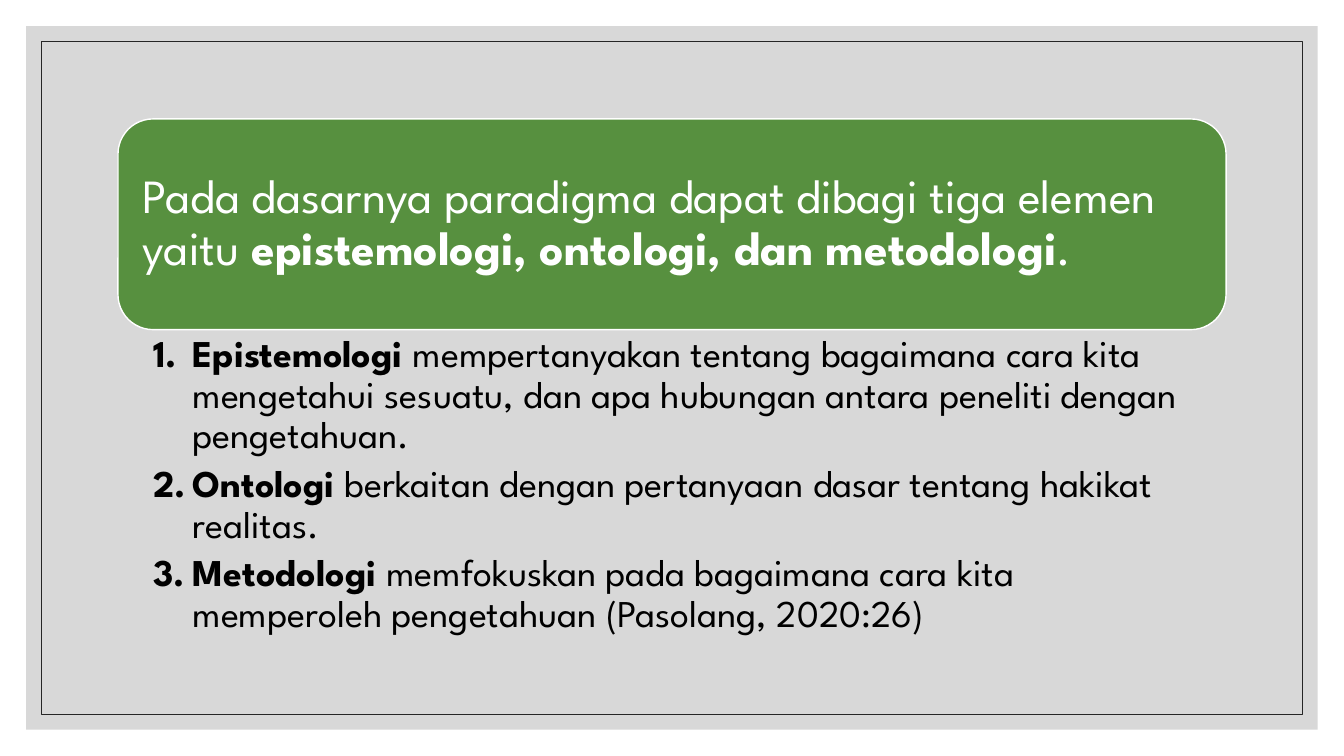
import pptx
import pptx.util
import pptx.dml.color
import pptx.enum.shapes
import pptx.enum.text
import pptx.oxml
import pptx.oxml.ns

LEAD = [("Pada dasarnya paradigma dapat dibagi tiga elemen yaitu ", False),
        ("epistemologi, ontologi, dan metodologi", True), (".", False)]
ITEMS = [
    ("Epistemologi ", "mempertanyakan tentang bagaimana cara kita mengetahui "
     "sesuatu, dan apa hubungan antara peneliti dengan pengetahuan."),
    ("Ontologi ", "berkaitan dengan pertanyaan dasar tentang hakikat realitas."),
    ("Metodologi ", "memfokuskan pada bagaimana cara kita memperoleh "
     "pengetahuan (Pasolang, 2020:26)"),
]
COLORS = {"panel": "BFBFBF", "frame": "262626", "card": "57903F",
          "white": "FFFFFF", "black": "000000"}
FONT = "League Spartan"
WIDE, HIGH = 13.33, 7.5
LEFT, TOP, CARD = 1.17, 1.18, 2.09
LIST = 3.23
HANG = 0.39

Inch = pptx.util.Inches
Shape = pptx.enum.shapes.MSO_SHAPE
Anchor = pptx.enum.text.MSO_ANCHOR


def color(name):
    return pptx.dml.color.RGBColor.from_string(COLORS[name])


def add_box(slide, kind, box, fill=None, line=None, width=1):
    shape = slide.shapes.add_shape(kind, *map(Inch, box))
    shape.shadow.inherit = False
    if fill:
        shape.fill.solid()
        shape.fill.fore_color.rgb = color(fill)
    else:
        shape.fill.background()
    if line:
        shape.line.color.rgb = color(line)
        shape.line.width = pptx.util.Pt(width)
    else:
        shape.line.fill.background()
    return shape


def inset(margin):
    """Box that keeps one margin from every slide edge."""
    return margin, margin, WIDE - 2 * margin, HIGH - 2 * margin


def set_frame(frame, anchor, pads):
    sides = ("left", "top", "right", "bottom")
    form = {f"margin_{side}": Inch(pad) for side, pad in zip(sides, pads)}
    form.update(word_wrap=True, vertical_anchor=anchor)
    for name, value in form.items():
        setattr(frame, name, value)


def write(para, runs, size, hue, after=0):
    form = {"alignment": pptx.enum.text.PP_ALIGN.LEFT, "line_spacing": 0.9,
            "space_after": pptx.util.Pt(after)}
    for name, value in form.items():
        setattr(para, name, value)
    for text, bold in runs:
        run = para.add_run()
        run.text = text
        form = {"name": FONT, "size": pptx.util.Pt(size), "bold": bold}
        for name, value in form.items():
            setattr(run.font, name, value)
        run.font.color.rgb = color(hue)


def number(para):
    """Turn a paragraph into a numbered item with a hanging indent."""
    para.level = 1
    props = para._p.get_or_add_pPr()
    props.set("marL", str(Inch(HANG)))
    props.set("indent", str(-Inch(HANG)))
    mark = pptx.oxml.parse_xml(
        f'<a:buAutoNum {pptx.oxml.ns.nsdecls("a")} type="arabicPeriod"/>')
    props.append(mark)


def main():
    deck = pptx.Presentation()
    deck.slide_width, deck.slide_height = Inch(WIDE), Inch(HIGH)
    slide = deck.slides.add_slide(deck.slide_layouts[6])

    panel = add_box(slide, Shape.RECTANGLE, inset(0.26), "panel")
    tint = panel.fill._xPr.find(".//" + pptx.oxml.ns.qn("a:srgbClr"))
    tint.append(pptx.oxml.parse_xml(
        f'<a:alpha {pptx.oxml.ns.nsdecls("a")} val="60000"/>'))
    add_box(slide, Shape.RECTANGLE, inset(0.41), line="frame", width=0.5)

    span = WIDE - 2 * LEFT
    card = add_box(slide, Shape.ROUNDED_RECTANGLE, (LEFT, TOP, span, CARD),
                   "card", "white")
    set_frame(card.text_frame, Anchor.MIDDLE, [0.14] * 4)
    write(card.text_frame.paragraphs[0], LEAD, 34, "white")

    box = slide.shapes.add_textbox(
        *map(Inch, (LEFT, TOP + CARD, span, LIST)))
    frame = box.text_frame
    set_frame(frame, Anchor.TOP, (0.35, 0.05, 0.26, 0.05))
    for index, (term, text) in enumerate(ITEMS):
        para = frame.add_paragraph() if index else frame.paragraphs[0]
        number(para)
        write(para, [(term, True), (text, False)], 27, "black", 5.4)

    deck.save("out.pptx")


if __name__ == "__main__":
    main()
